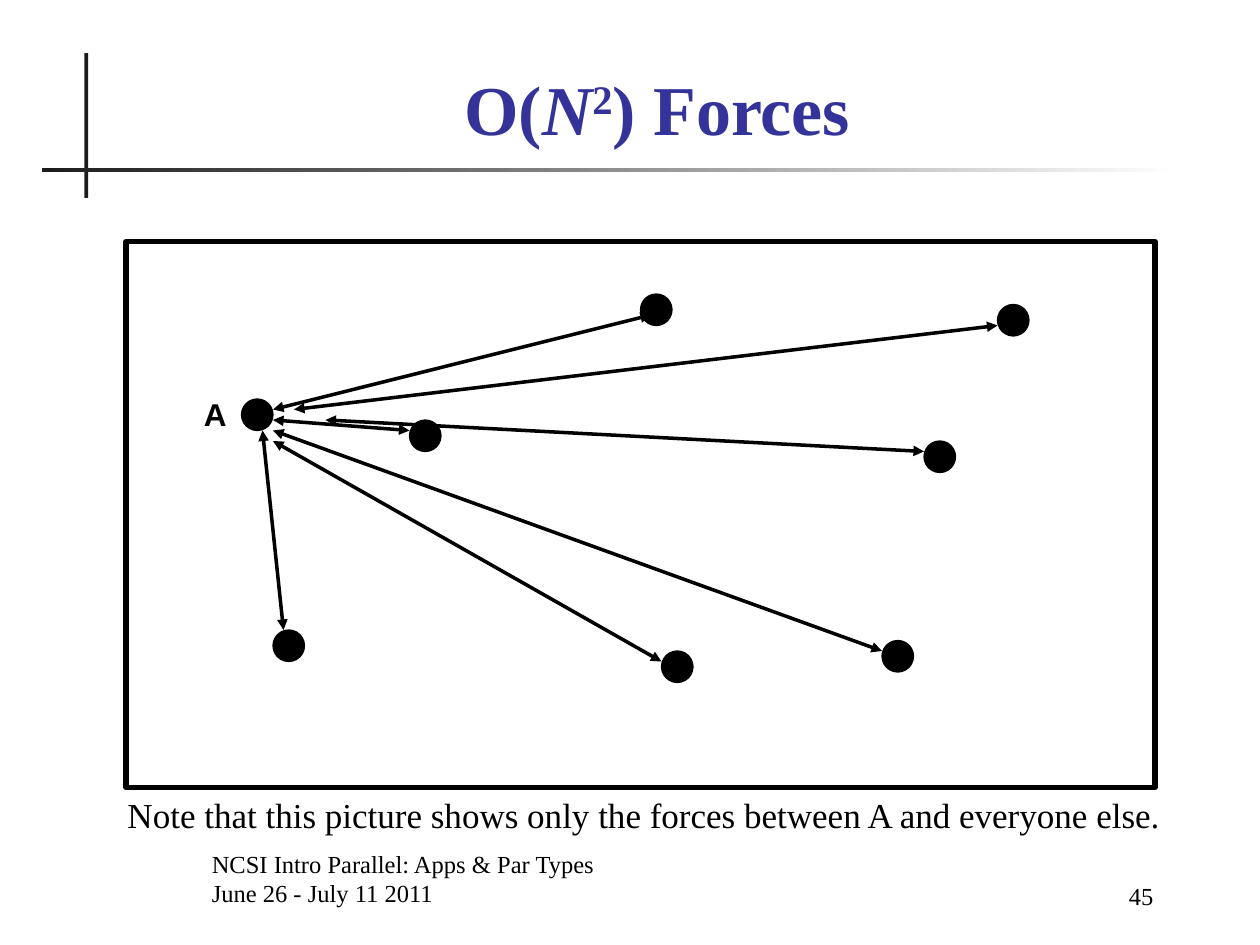
import pptx
import pptx.util
import pptx.dml.color
import pptx.enum.shapes
import pptx.enum.text
import pptx.oxml.ns
import lxml.etree

Cm, Pt = pptx.util.Cm, pptx.util.Pt
SHAPE = pptx.enum.shapes.MSO_SHAPE
ALIGN = pptx.enum.text.PP_ALIGN
ANCHOR = pptx.enum.text.MSO_ANCHOR
SERIF = "Times New Roman"
BLACK = "000000"
GRID = 2.54 / 12


def color(value):
    return pptx.dml.color.RGBColor.from_string(value)


def grid(*units):
    return [Cm(n * GRID) for n in units]


def set_font(font, value, **formats):
    for name, setting in formats.items():
        setattr(font, name, setting)
    font.color.rgb = color(value)


def add_shape(s, kind, box, fill=None, line=None, width=0.75):
    sp = s.shapes.add_shape(kind, *box)
    sp.shadow.inherit = False
    if fill:
        sp.fill.solid()
        sp.fill.fore_color.rgb = color(fill)
    else:
        sp.fill.background()
    if line:
        sp.line.color.rgb = color(line)
        sp.line.width = Pt(width)
    else:
        sp.line.fill.background()
    return sp


def add_arrow(s, x1, y1, x2, y2):
    sp = s.shapes.add_connector(
        pptx.enum.shapes.MSO_CONNECTOR.STRAIGHT, *grid(x1, y1, x2, y2))
    sp.line.color.rgb = color(BLACK)
    sp.line.width = Pt(2)
    ln = sp.line._get_or_add_ln()
    for end in ("a:headEnd", "a:tailEnd"):
        lxml.etree.SubElement(ln, pptx.oxml.ns.qn(end), type="triangle")
    lxml.etree.SubElement(ln.getparent(), pptx.oxml.ns.qn("a:effectLst"))


def add_text(s, box, lines, align=ALIGN.LEFT, anchor=ANCHOR.TOP, wrap=True, **formats):
    tf = s.shapes.add_textbox(*box).text_frame
    tf.word_wrap = wrap
    tf.vertical_anchor = anchor
    for i, text in enumerate(lines):
        p = tf.paragraphs[0] if i == 0 else tf.add_paragraph()
        p.alignment = align
        r = p.add_run()
        r.text = text
        set_font(r.font, BLACK, **formats)


def add_rules(s, left, top):
    add_shape(s, SHAPE.RECTANGLE, (Cm(left + 0.86), Cm(top), Cm(0.08), Cm(2.92)), "1C1C1C")
    sp = add_shape(s, SHAPE.RECTANGLE, (Cm(left), Cm(top + 2.31), Cm(22.86), Cm(0.08)))
    sp.fill.gradient()
    sp.fill.gradient_angle = 0
    for stop, value in zip(sp.fill.gradient_stops, ("1C1C1C", "FFFFFF")):
        stop.color.rgb = color(value)


def add_title(s, left, top, width, height):
    sp = s.shapes.title
    sp.left, sp.top, sp.width, sp.height = Cm(left), Cm(top), Cm(width), Cm(height)
    tf = sp.text_frame
    tf.auto_size = pptx.enum.text.MSO_AUTO_SIZE.NONE
    tf.vertical_anchor = ANCHOR.BOTTOM
    p = tf.paragraphs[0]
    p.alignment = ALIGN.CENTER
    for text in ("O(", "N", "2", ") Forces"):
        r = p.add_run()
        r.text = text
        set_font(r.font, "333399", name=SERIF, size=Pt(40), bold=True, italic=text == "N")
        if text == "2":
            r.font._element.set("baseline", "30000")


def add_forces(s, left, top, width, height):
    add_shape(s, SHAPE.RECTANGLE, grid(left, top, width, height), line=BLACK, width=3)
    bodies = [(11, 15), (27, 17), (83, 6), (76, 19), (72, 38), (51, 39), (49, 5), (14, 37)]
    for x, y in bodies:
        add_shape(s, SHAPE.OVAL, grid(left + x, top + y, 3, 3), BLACK, BLACK)
    forces = [
        (14, 17, 27, 18), (13, 18, 15, 37), (14, 16, 50, 7), (14, 19, 51, 40),
        (14, 18, 72, 39), (16, 16, 83, 8), (19, 17, 76, 20),
    ]
    for x1, y1, x2, y2 in forces:
        add_arrow(s, left + x1, top + y1, left + x2, top + y2)
    add_text(s, grid(left + 6, top + 14, 5, 4.8), ["A"], ALIGN.CENTER,
             name="Arial", size=Pt(18), bold=True)
    add_text(s, grid(left - 1.4, top + height, 101.5, 5.3),
             ["Note that this picture shows only the forces between A and everyone else."],
             ALIGN.CENTER, wrap=False, name=SERIF, size=Pt(20))


def add_footer(s, left, top):
    small = {"anchor": ANCHOR.BOTTOM, "name": SERIF, "size": Pt(14)}
    add_text(s, (Cm(left), Cm(top), Cm(15.45), Cm(1.27)),
             ["NCSI Intro Parallel: Apps & Par Types", "June 26 - July 11 2011"], **small)
    add_text(s, (Cm(left + 15.88), Cm(top + 0.05), Cm(3.6), Cm(1.27)),
             ["45"], ALIGN.RIGHT, **small)


def main():
    prs = pptx.Presentation()
    prs.slide_width, prs.slide_height = Cm(25.4), Cm(19.05)
    s = prs.slides.add_slide(prs.slide_layouts[5])
    add_rules(s, 0.84, 1.07)
    add_title(s, 2.11, 1.27, 22.28, 1.88)
    add_forces(s, 12, 23, 98, 52)
    add_footer(s, 4.02, 17.15)
    prs.save("out.pptx")


if __name__ == "__main__":
    main()
